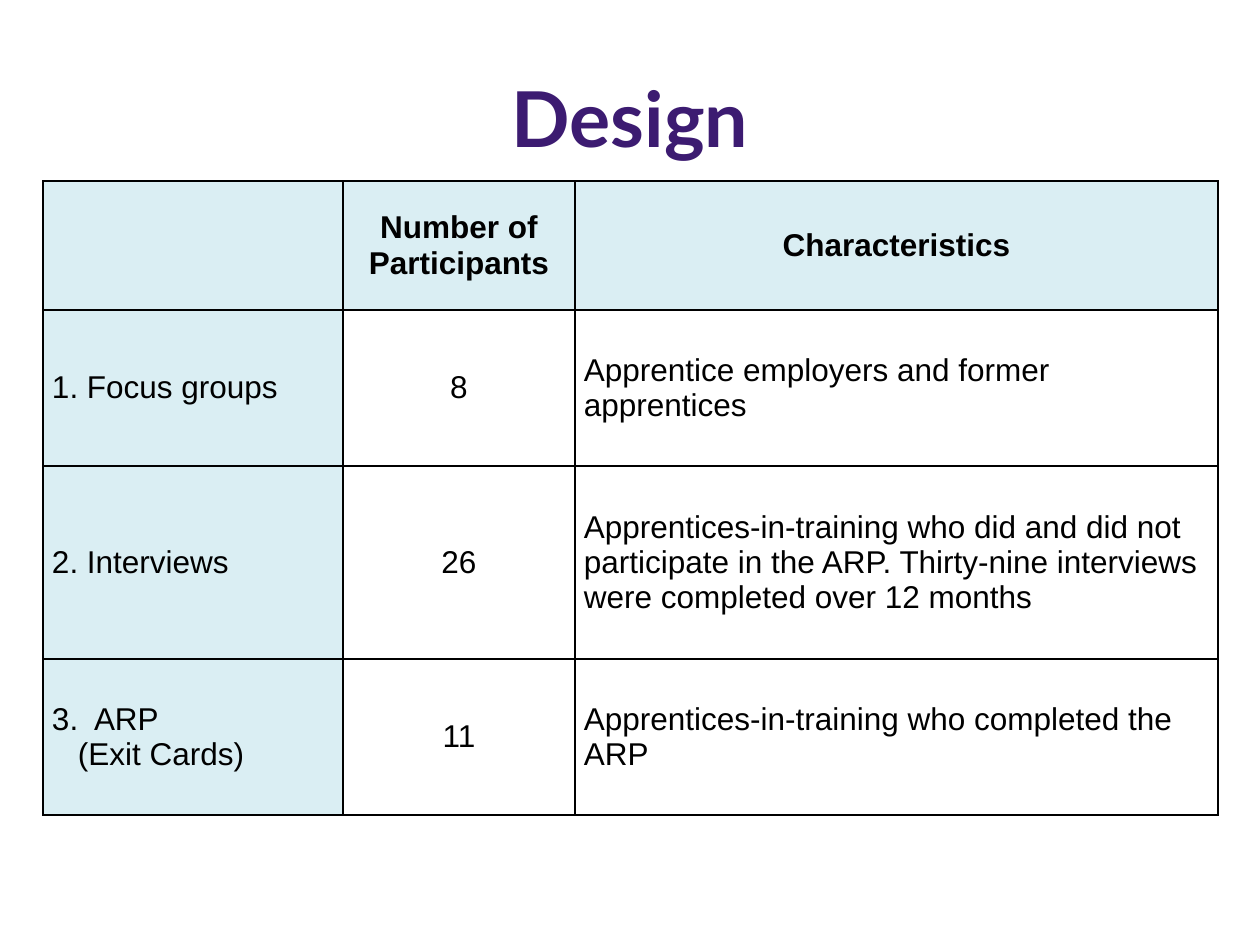
from lxml.etree import SubElement
from pptx import Presentation
from pptx.dml.color import RGBColor
from pptx.enum.text import MSO_ANCHOR, PP_ALIGN
from pptx.oxml.ns import qn
from pptx.util import Pt

COLORS = {"title": "3C1B71", "text": "000000", "border": "000000", "shade": "DAEEF3"}
COLUMN_WIDTHS = [300, 232, 643]
ROW_HEIGHTS = [129, 156, 193, 156]
ROWS = [
    ["", "Number of Participants", "Characteristics"],
    ["1. Focus groups", "8", "Apprentice employers and former apprentices"],
    ["2. Interviews", "26",
     "Apprentices-in-training who did and did not participate in the ARP. "
     "Thirty-nine interviews were completed over 12 months"],
    ["3.\tARP\n(Exit Cards)", "11", "Apprentices-in-training who completed the ARP"],
]


def px(length):
    return round(length * 914400 / 126)


def set_font(paragraph, name, size, color, bold):
    font = paragraph.font
    font.name, font.size, font.bold = name, Pt(size), bold
    font.color.rgb = RGBColor.from_string(COLORS[color])


presentation = Presentation()
presentation.slide_width, presentation.slide_height = px(1260), px(945)
slide = presentation.slides.add_slide(presentation.slide_layouts[6])

# Table
table = slide.shapes.add_table(
    len(ROWS), len(COLUMN_WIDTHS), px(43), px(181),
    px(sum(COLUMN_WIDTHS)), px(sum(ROW_HEIGHTS))).table
for column, width in zip(table.columns, COLUMN_WIDTHS):
    column.width = px(width)
for row, height in zip(table.rows, ROW_HEIGHTS):
    row.height = px(height)

for row_index, texts in enumerate(ROWS):
    for column_index, text in enumerate(texts):
        cell = table.cell(row_index, column_index)
        cell.text = text
        cell.vertical_anchor = MSO_ANCHOR.MIDDLE
        cell.margin_left = cell.margin_right = px(9)
        cell.margin_top = cell.margin_bottom = 0

        # Borders come before the fill in the cell properties
        properties = cell._tc.get_or_add_tcPr()
        for side in ("lnL", "lnR", "lnT", "lnB"):
            line = SubElement(properties, qn(f"a:{side}"), w=str(Pt(1)))
            line_fill = SubElement(line, qn("a:solidFill"))
            SubElement(line_fill, qn("a:srgbClr"), val=COLORS["border"])
        if row_index == 0 or column_index == 0:
            cell.fill.solid()
            cell.fill.fore_color.rgb = RGBColor.from_string(COLORS["shade"])
        else:
            cell.fill.background()

        centered = row_index == 0 or column_index == 1
        for paragraph in cell.text_frame.paragraphs:
            paragraph.alignment = PP_ALIGN.CENTER if centered else PP_ALIGN.LEFT
            if "\t" in paragraph.text:
                tabs = SubElement(paragraph._p.get_or_add_pPr(), qn("a:tabLst"))
                SubElement(tabs, qn("a:tab"), pos=str(px(42)), algn="l")
            set_font(paragraph, "Arial", 18, "text", row_index == 0)

# Second line of the last row label is indented
exit_cards = table.cell(3, 0).text_frame.paragraphs[1]
exit_cards._p.get_or_add_pPr().set("marL", str(px(26)))

# Title
title = slide.shapes.add_textbox(px(63), px(38), px(1134), px(158))
title.text_frame.word_wrap = True
title.text_frame.vertical_anchor = MSO_ANCHOR.MIDDLE
paragraph = title.text_frame.paragraphs[0]
paragraph.text = "Design"
paragraph.alignment = PP_ALIGN.CENTER
set_font(paragraph, "Lato", 44, "title", True)

presentation.save("out.pptx")
